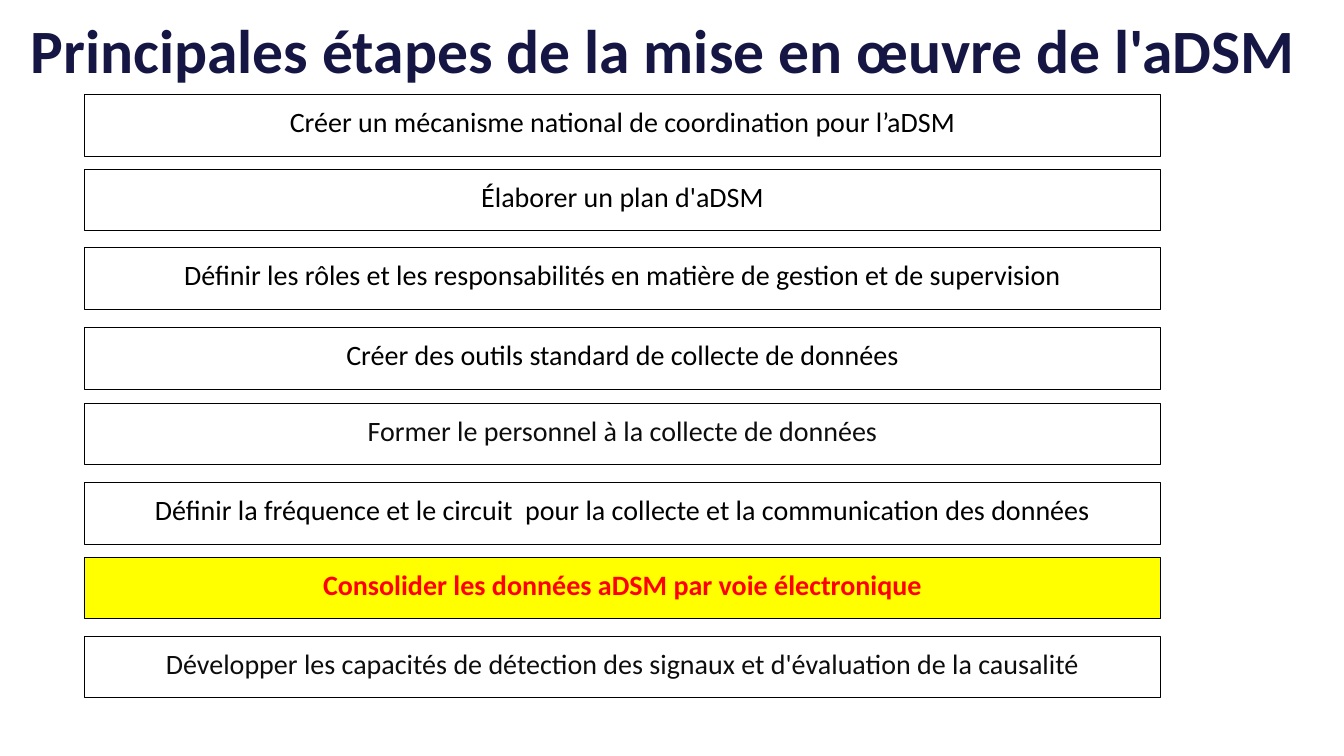
from dataclasses import dataclass

from pptx import Presentation
from pptx import util as u
from pptx.dml.color import RGBColor
from pptx.enum import shapes, text

EMU_PER_PX = 9144  # 100 px to the inch
FONT = "Calibri"
NAVY, BLACK, CHARCOAL = "161645", "000000", "0D0D0D"
WHITE, YELLOW, RED = "FFFFFF", "FFFF00", "FF0000"
STEP_LEFT, STEP_WIDTH, STEP_HEIGHT = 84, 1067, 61


@dataclass(frozen=True)
class Step:
    top: int
    wording: str
    ink: str = BLACK
    fill: str | None = None
    bold: bool = False


STEPS = [
    Step(94, "Créer un mécanisme national de coordination pour l’aDSM"),
    Step(168, "Élaborer un plan d'aDSM"),
    Step(246, "Définir les rôles et les responsabilités en matière de gestion et de supervision"),
    Step(325, "Créer des outils standard de collecte de données"),
    Step(400, "Former le personnel à la collecte de données", CHARCOAL, WHITE),
    Step(479, "Définir la fréquence et le circuit  pour la collecte et la communication des données"),
    Step(553, "Consolider les données aDSM par voie électronique", RED, YELLOW, True),
    Step(631, "Développer les capacités de détection des signaux et d'évaluation de la causalité",
         CHARCOAL, WHITE),
]


def px(length: int) -> u.Emu:
    return u.Emu(length * EMU_PER_PX)


def colour(hex_code: str) -> RGBColor:
    return RGBColor.from_string(hex_code)


def write(frame, wording: str, size: int, ink: str, bold: bool, anchor):
    """Fill a text frame with one centred paragraph and return it."""
    frame.word_wrap = True
    frame.auto_size = text.MSO_AUTO_SIZE.NONE
    frame.vertical_anchor = anchor
    frame.text = wording
    line = frame.paragraphs[0]
    line.alignment = text.PP_ALIGN.CENTER
    line.font.name = FONT
    line.font.size = u.Pt(size)
    line.font.bold = bold
    line.font.color.rgb = colour(ink)
    return line


def add_heading(slide, wording: str) -> None:
    heading = slide.shapes.title
    heading.left, heading.top = px(13), px(5)
    heading.width, heading.height = px(1291), px(87)
    write(heading.text_frame, wording, 44, NAVY, True, text.MSO_ANCHOR.MIDDLE)


def add_step(slide, step: Step) -> None:
    box = slide.shapes.add_shape(shapes.MSO_SHAPE.RECTANGLE, px(STEP_LEFT), px(step.top),
                                 px(STEP_WIDTH), px(STEP_HEIGHT))
    box.shadow.inherit = False
    if step.fill is None:
        box.fill.background()
    else:
        box.fill.solid()
        box.fill.fore_color.rgb = colour(step.fill)
    box.line.color.rgb = colour(BLACK)
    box.line.width = u.Pt(0.75)
    line = write(box.text_frame, step.wording, 20, step.ink, step.bold, text.MSO_ANCHOR.TOP)
    line.line_spacing = 1.15
    line.space_after = u.Pt(10)


def main() -> None:
    deck = Presentation()
    deck.slide_width, deck.slide_height = px(1333), px(750)
    slide = deck.slides.add_slide(deck.slide_layouts[5])  # title only

    # Heading
    add_heading(slide, "Principales étapes de la mise en œuvre de l'aDSM")

    # Steps, from first to last
    for step in STEPS:
        add_step(slide, step)

    deck.save("out.pptx")


if __name__ == "__main__":
    main()
